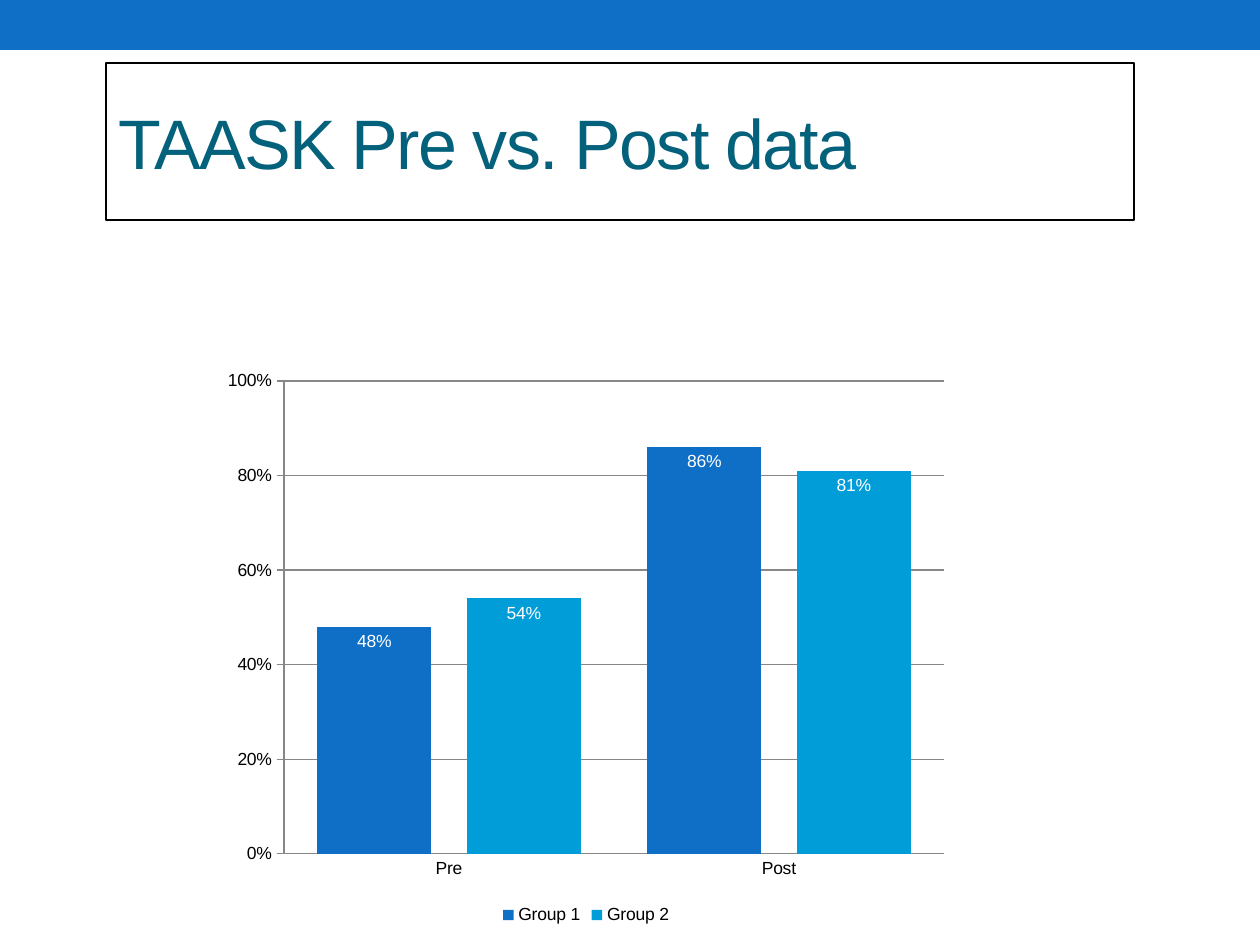
from lxml import etree
from pptx import Presentation
from pptx import util as u
from pptx.chart.data import CategoryChartData
from pptx.dml.color import RGBColor
from pptx.enum import chart as charts, shapes, text
from pptx.oxml import ns

PX_PER_INCH = 126
FONT = "Arial"
BLUE = RGBColor(0x0F, 0x6F, 0xC6)
SKY = RGBColor(0x00, 0x9D, 0xD9)
TEAL = RGBColor(0x04, 0x61, 0x7B)
GREY = RGBColor(0x87, 0x87, 0x87)
BLACK = RGBColor(0x00, 0x00, 0x00)
WHITE = RGBColor(0xFF, 0xFF, 0xFF)

CATEGORIES = ["Pre", "Post"]
GROUPS = [("Group 1", [0.48, 0.86], BLUE), ("Group 2", [0.54, 0.81], SKY)]


def px(length):
    """Turn whole pixels into EMU."""
    return u.Emu(round(length * u.Inches(1) / PX_PER_INCH))


def add_band(page, box):
    """Draw the coloured band across the top."""
    band = page.shapes.add_shape(shapes.MSO_SHAPE.RECTANGLE, *map(px, box))
    band.shadow.inherit = False
    band.fill.solid()
    band.fill.fore_color.rgb = BLUE
    band.line.fill.background()


def place_title(page, box, wording):
    """Move the title placeholder into its outlined box and fill it."""
    title = page.shapes.title
    title.left, title.top, title.width, title.height = map(px, box)
    title.line.color.rgb = BLACK
    title.line.width = u.Pt(0.75)
    frame = title.text_frame
    frame.word_wrap = True
    frame.auto_size = text.MSO_AUTO_SIZE.NONE
    frame.vertical_anchor = text.MSO_ANCHOR.MIDDLE
    para = frame.paragraphs[0]
    para.alignment = text.PP_ALIGN.LEFT
    span = para.add_run()
    span.text = wording
    span.font.name = FONT
    span.font.size = u.Pt(40)
    span.font.color.rgb = TEAL
    span._r.get_or_add_rPr().set("spc", "-100")


def set_plot_area(chart, box, plot_box):
    """Fix the inner plot area as fractions of the chart box."""
    left, top, width, height = box
    plot_left, plot_top, plot_width, plot_height = plot_box
    fractions = {
        "x": (plot_left - left) / width,
        "y": (plot_top - top) / height,
        "w": plot_width / width,
        "h": plot_height / height,
    }
    area = chart._chartSpace.chart.plotArea
    for old in area.findall(ns.qn("c:layout")):
        area.remove(old)
    layout = etree.Element(ns.qn("c:layout"))
    manual = etree.SubElement(layout, ns.qn("c:manualLayout"))
    settings = [("layoutTarget", "inner"), ("xMode", "edge"), ("yMode", "edge")]
    settings += [(key, f"{value:.4f}") for key, value in fractions.items()]
    for name, value in settings:
        etree.SubElement(manual, ns.qn(f"c:{name}")).set("val", value)
    area.insert(0, layout)


def format_axes(chart):
    """Set the scale, ticks and grid of both axes."""
    scale = chart.value_axis
    scale.minimum_scale, scale.maximum_scale, scale.major_unit = 0, 1, 0.2
    scale.major_tick_mark = charts.XL_TICK_MARK.OUTSIDE
    scale.has_major_gridlines = True
    scale.tick_labels.number_format = "0%"
    scale.tick_labels.number_format_is_linked = False
    chart.category_axis.major_tick_mark = charts.XL_TICK_MARK.NONE
    for part in (scale, scale.major_gridlines, chart.category_axis):
        part.format.line.color.rgb = GREY
        part.format.line.width = u.Pt(0.75)


def format_series(series, color):
    """Colour one series and label its columns."""
    series.format.fill.solid()
    series.format.fill.fore_color.rgb = color
    series.invert_if_negative = False
    labels = series.data_labels
    labels.show_value = True
    labels.position = charts.XL_LABEL_POSITION.INSIDE_END
    labels.number_format = "0%"
    labels.number_format_is_linked = False
    labels.font.name = FONT
    labels.font.size = u.Pt(10)
    labels.font.color.rgb = WHITE


def add_group_chart(page, box, plot_box):
    """Add the clustered columns comparing both groups."""
    data = CategoryChartData(number_format="0%")
    data.categories = CATEGORIES
    for name, values, _ in GROUPS:
        data.add_series(name, values)
    kind = charts.XL_CHART_TYPE.COLUMN_CLUSTERED
    chart = page.shapes.add_chart(kind, *map(px, box), data).chart
    chart.has_title = False
    chart.font.name = FONT
    chart.font.size = u.Pt(10)
    chart.font.color.rgb = BLACK
    chart.has_legend = True
    chart.legend.position = charts.XL_LEGEND_POSITION.BOTTOM
    chart.legend.include_in_layout = False
    plot = chart.plots[0]
    plot.gap_width = 58
    plot.overlap = -31
    plot.vary_by_categories = False
    format_axes(chart)
    for series, (_, _, color) in zip(plot.series, GROUPS):
        format_series(series, color)
    set_plot_area(chart, box, plot_box)


def main():
    """Build the slide and save it."""
    deck = Presentation()
    deck.slide_width, deck.slide_height = px(1260), px(945)
    page = deck.slides.add_slide(deck.slide_layouts.get_by_name("Title Only"))
    page.background.fill.solid()
    page.background.fill.fore_color.rgb = WHITE
    add_band(page, (0, 0, 1260, 50))
    place_title(page, (106, 63, 1028, 157), "TAASK Pre vs. Post data")
    add_group_chart(page, (213, 360, 746, 570), (284, 381, 660, 473))
    deck.save("out.pptx")


if __name__ == "__main__":
    main()
